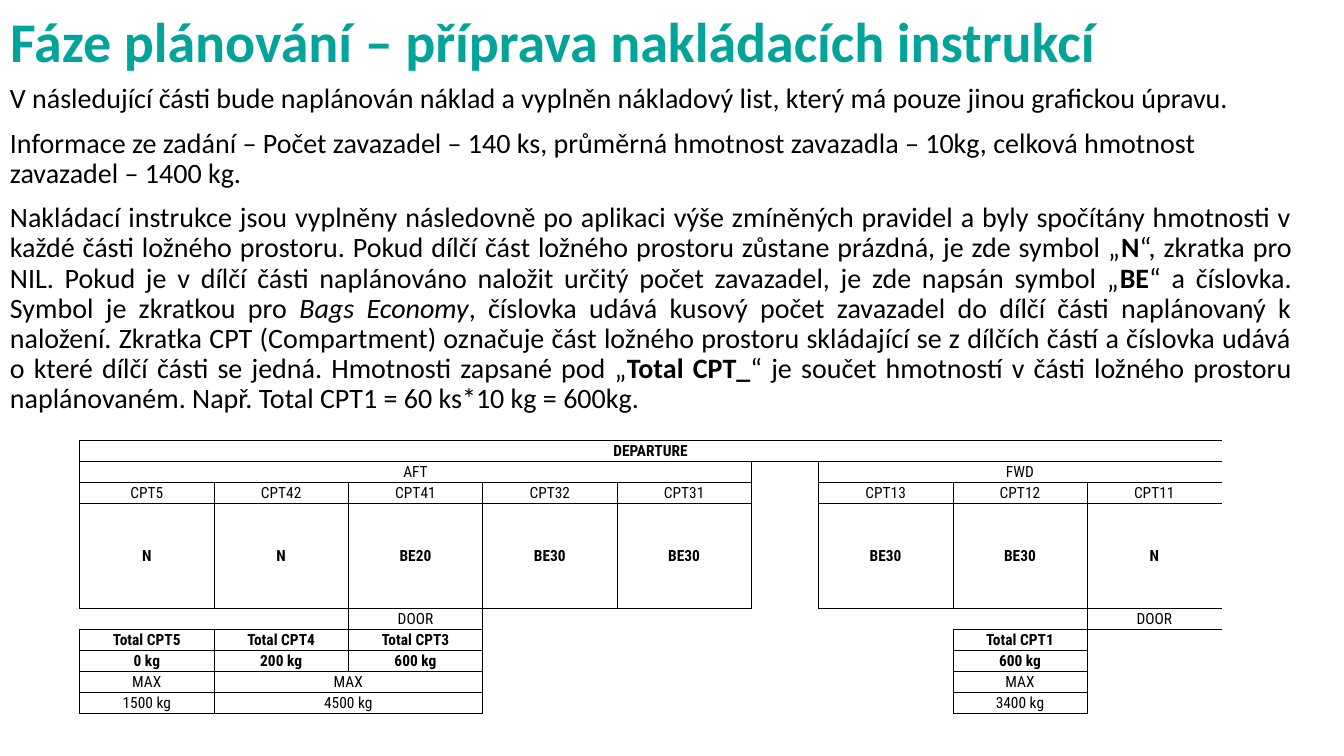
from lxml.etree import SubElement
from pptx import Presentation
from pptx.dml.color import RGBColor
from pptx.enum.text import MSO_ANCHOR as Anchor, MSO_AUTO_SIZE as AutoSize, PP_ALIGN as Align
from pptx.oxml.ns import qn
from pptx.util import Inches, Pt

TITLE = "Fáze plánování – příprava nakládacích instrukcí"

# Paragraphs: alignment, then runs of text and style
BODY = [
    (Align.LEFT, [("V následující části bude naplánován náklad a vyplněn nákladový list, "
                   "který má pouze jinou grafickou úpravu.", "")]),
    (Align.LEFT, [("Informace ze zadání – Počet zavazadel – 140 ks, průměrná hmotnost zavazadla "
                   "– 10kg, celková hmotnost zavazadel – 1400 kg.", "")]),
    (Align.JUSTIFY, [
        ("Nakládací instrukce jsou vyplněny následovně po aplikaci výše zmíněných pravidel a byly "
         "spočítány hmotnosti v každé části ložného prostoru. Pokud dílčí část ložného prostoru "
         "zůstane prázdná, je zde symbol „", ""),
        ("N", "bold"),
        ("“, zkratka pro NIL. Pokud je v dílčí části naplánováno naložit určitý počet zavazadel, "
         "je zde napsán symbol „", ""),
        ("BE", "bold"),
        ("“ a číslovka. Symbol je zkratkou pro ", ""),
        ("Bags Economy", "italic"),
        (", číslovka udává kusový počet zavazadel do dílčí části naplánovaný k naložení. Zkratka "
         "CPT (Compartment) označuje část ložného prostoru skládající se z dílčích částí a "
         "číslovka udává o které dílčí části se jedná. Hmotnosti zapsané pod „", ""),
        ("Total CPT_", "bold"),
        ("“ je součet hmotností v části ložného prostoru naplánovaném. "
         "Např. Total CPT1 = 60 ks*10 kg = 600kg. ", ""),
    ]),
]

# Bands of the plan: first row, rows high, bold, then (first column, columns wide, text)
PLAN = [
    (0, 1, True, [(0, 16, "DEPARTURE")]),
    (1, 1, False, [(0, 9, "AFT"), (10, 6, "FWD")]),
    (2, 1, False, [(0, 2, "CPT5"), (2, 2, "CPT42"), (4, 1, "CPT41"), (5, 2, "CPT32"),
                   (7, 2, "CPT31"), (10, 2, "CPT13"), (12, 2, "CPT12"), (14, 2, "CPT11")]),
    (3, 5, True, [(0, 2, "N"), (2, 2, "N"), (4, 1, "BE20"), (5, 2, "BE30"),
                  (7, 2, "BE30"), (10, 2, "BE30"), (12, 2, "BE30"), (14, 2, "N")]),
    (8, 1, False, [(4, 1, "DOOR"), (14, 2, "DOOR")]),
    (9, 1, True, [(0, 2, "Total CPT5"), (2, 2, "Total CPT4"), (4, 1, "Total CPT3"),
                  (12, 2, "Total CPT1")]),
    (10, 1, True, [(0, 2, "0 kg"), (2, 2, "200 kg"), (4, 1, "600 kg"), (12, 2, "600 kg")]),
    (11, 1, False, [(0, 2, "MAX"), (2, 3, "MAX"), (12, 2, "MAX")]),
    (12, 1, False, [(0, 2, "1500 kg"), (2, 3, "4500 kg"), (12, 2, "3400 kg")]),
]
ROWS, COLUMNS, WIDE_COLUMN = 13, 16, 4

THEME = {
    "title": {"name": "Calibri", "size": Pt(40), "color": "00A499", "bold": True},
    "body": {"name": "Calibri", "size": Pt(20), "color": "000000"},
    "plan": {"name": "Roboto Condensed", "size": Pt(11), "color": "000000"},
    "border": {"color": "000000", "width": Pt(0.5)},
}
SIDES = {"a:lnL": (0, -1), "a:lnR": (0, 1), "a:lnT": (-1, 0), "a:lnB": (1, 0)}


def apply(target, values):
    for key, value in values.items():
        setattr(target, key, value)


def add_run(paragraph, text, role, **extra):
    run = paragraph.add_run()
    run.text = text
    style = {**THEME[role], **extra}
    run.font.color.rgb = RGBColor.from_string(style.pop("color"))
    apply(run.font, style)


def add_title(slide):
    title = slide.shapes.title
    apply(title, {"left": 0, "top": 0, "width": Inches(12.91), "height": Inches(0.79)})
    apply(title.text_frame, {"vertical_anchor": Anchor.BOTTOM, "word_wrap": True,
                             "auto_size": AutoSize.NONE})
    heading = title.text_frame.paragraphs[0]
    apply(heading, {"alignment": Align.LEFT, "line_spacing": 0.9})
    add_run(heading, TITLE, "title")


def add_body(slide):
    frame = slide.shapes.add_textbox(0, Inches(0.79), Inches(12.91), Inches(4.61)).text_frame
    apply(frame, {"word_wrap": True, "auto_size": AutoSize.NONE})
    for index, (alignment, runs) in enumerate(BODY):
        paragraph = frame.add_paragraph() if index else frame.paragraphs[0]
        apply(paragraph, {"alignment": alignment, "line_spacing": 0.9, "space_before": Pt(10)})
        for text, style in runs:
            add_run(paragraph, text, "body", **({style: True} if style else {}))


def draw_borders(cell, place, owners):
    """Line each side where the neighbouring cell belongs to another block."""
    properties = cell._tc.get_or_add_tcPr()
    row, column = place
    for position, (side, (down, right)) in enumerate(SIDES.items()):
        line = SubElement(properties, qn(side), w=str(THEME["border"]["width"]))
        properties.insert(position, line)
        if owners.get(place) != owners.get((row + down, column + right)):
            fill = SubElement(line, qn("a:solidFill"))
            SubElement(fill, qn("a:srgbClr"), val=THEME["border"]["color"])
        else:
            SubElement(line, qn("a:noFill"))


def add_plan(slide):
    width, height = Inches(11.33), Inches(2.71)
    plan = slide.shapes.add_table(ROWS, COLUMNS, Inches(0.79), Inches(4.37), width, height).table
    apply(plan, {"first_row": False, "horz_banding": False})
    unit = width // (COLUMNS + 1)
    for index, column in enumerate(plan.columns):
        column.width = unit * 2 if index == WIDE_COLUMN else unit
    for row in plan.rows:
        row.height = height // ROWS

    owners = {}
    for top, high, bold, blocks in PLAN:
        for left, wide, text in blocks:
            block = plan.cell(top, left)
            owners.update({(row, column): (top, left) for row in range(top, top + high)
                           for column in range(left, left + wide)})
            if high * wide > 1:
                block.merge(plan.cell(top + high - 1, left + wide - 1))
            add_run(block.text_frame.paragraphs[0], text, "plan", bold=bold)

    edge = Inches(0.01)
    for row in range(ROWS):
        for column in range(COLUMNS):
            cell = plan.cell(row, column)
            apply(cell, {"margin_left": edge, "margin_right": edge, "margin_top": edge,
                         "margin_bottom": 0, "vertical_anchor": Anchor.MIDDLE})
            cell.fill.background()
            paragraph = cell.text_frame.paragraphs[0]
            paragraph.alignment = Align.CENTER
            # Keeps empty cells from stretching their row
            SubElement(paragraph._p, qn("a:endParaRPr"),
                       sz=str(int(THEME["plan"]["size"].pt * 100)))
            draw_borders(cell, (row, column), owners)


def main():
    deck = Presentation()
    apply(deck, {"slide_width": Inches(13.33), "slide_height": Inches(7.5)})
    slide = deck.slides.add_slide(deck.slide_layouts[5])
    add_title(slide)
    add_body(slide)
    add_plan(slide)
    deck.save("out.pptx")


if __name__ == "__main__":
    main()
